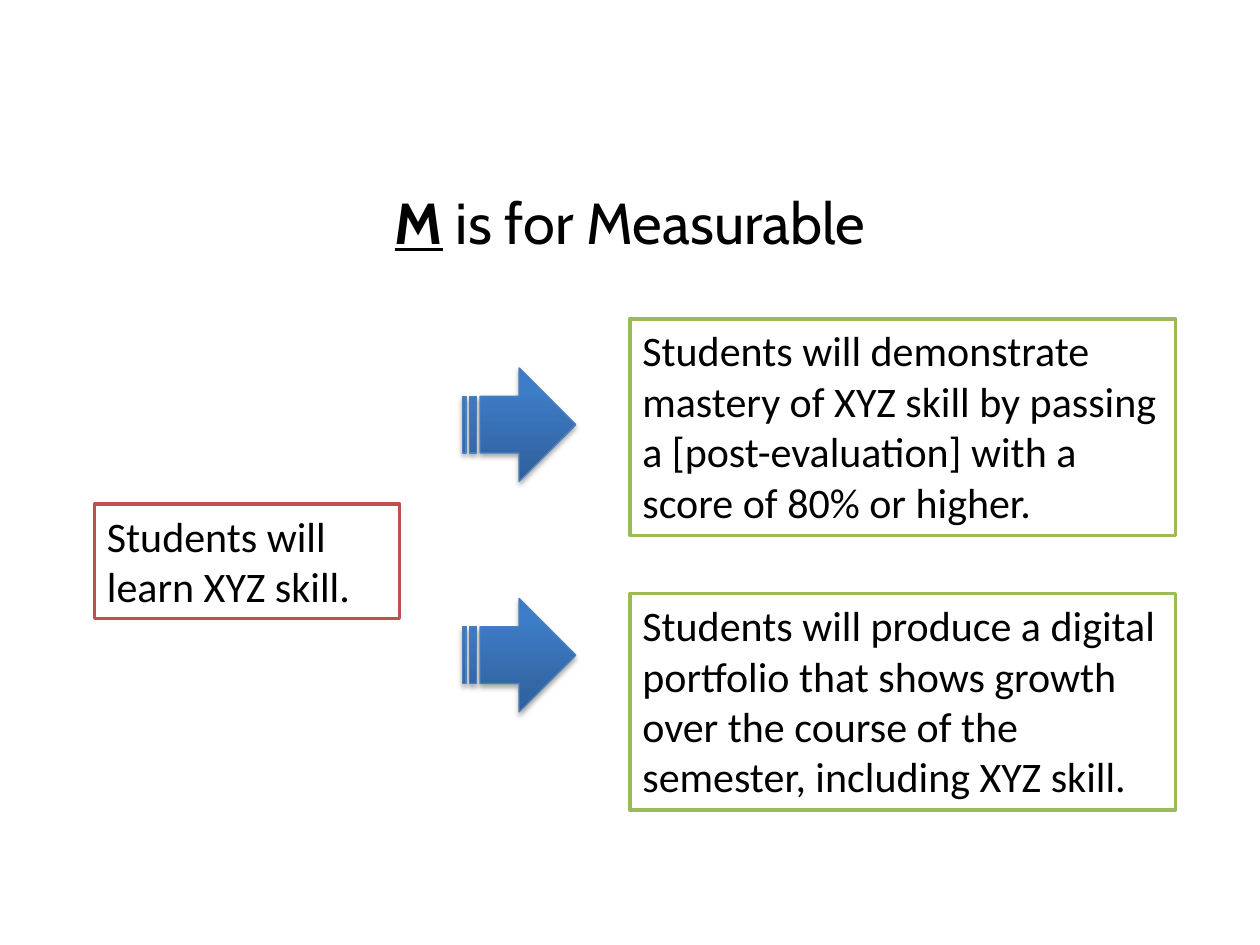
from lxml import etree
from pptx import Presentation
from pptx.dml.color import RGBColor
from pptx.enum.shapes import MSO_SHAPE
from pptx.enum.text import MSO_ANCHOR, MSO_AUTO_SIZE, PP_ALIGN
from pptx.oxml.ns import qn
from pptx.util import Inches, Pt

RECT = MSO_SHAPE.RECTANGLE
ARROW = MSO_SHAPE.STRIPED_RIGHT_ARROW
MIDDLE = MSO_ANCHOR.MIDDLE
CENTER, LEFT = PP_ALIGN.CENTER, PP_ALIGN.LEFT
GROW = MSO_AUTO_SIZE.SHAPE_TO_FIT_TEXT
NO_FIT = MSO_AUTO_SIZE.NONE

COLORS = {
    "text": "000000", "paper": "FFFFFF",
    "vague": "C0504D", "clear": "9BBB59", "edge": "4B7EBC",
    "dark": "2F5F99", "mid": "3D7CC7", "light": "3A7CCB",
}
STOPS = [(0, "dark"), (80, "mid"), (100, "light")]

# Each measurable goal: arrow top, box top, wording
GOALS = [
    (2.92, 2.53, "Students will demonstrate mastery of XYZ skill by passing "
                 "a [post-evaluation] with a score of 80% or higher."),
    (4.75, 4.71, "Students will produce a digital portfolio that shows growth "
                 "over the course of the semester, including XYZ skill."),
]


def color(name):
    return RGBColor.from_string(COLORS[name])


def set_font(font, face, size):
    font.name = face
    font.size = Pt(size)
    font.color.rgb = color("text")


def add_shape(slide, kind, box, edge, width):
    shape = slide.shapes.add_shape(kind, *map(Inches, box))
    shape.shadow.inherit = False
    shape.line.color.rgb = color(edge)
    shape.line.width = Pt(width)
    return shape


def add_title(slide):
    title = slide.shapes.title
    title.left, title.top = Inches(0.5), Inches(1.17)
    title.width, title.height = Inches(9), Inches(1.17)
    frame = title.text_frame
    frame.vertical_anchor = MIDDLE
    frame.auto_size = NO_FIT
    para = frame.paragraphs[0]
    para.alignment = CENTER
    for text, strong in [("M", True), (" is for Measurable", False)]:
        run = para.add_run()
        run.text = text
        set_font(run.font, "Cabin", 33)
        run.font.bold = run.font.underline = strong


def add_box(slide, box, edge, text):
    shape = add_shape(slide, RECT, box, edge, 2)
    shape.fill.solid()
    shape.fill.fore_color.rgb = color("paper")
    frame = shape.text_frame
    frame.word_wrap = True
    frame.auto_size = GROW
    frame.vertical_anchor = MSO_ANCHOR.TOP
    para = frame.paragraphs[0]
    para.text = text
    para.alignment = LEFT
    set_font(para.font, "Calibri", 24)


def add_color(parent, name):
    return etree.SubElement(parent, qn("a:srgbClr"), val=COLORS[name])


def add_arrow(slide, top):
    shape = add_shape(slide, ARROW, (3.67, top, 0.9, 0.9), "edge", 0.75)

    # Gradient running from the bottom up
    shape.fill.gradient()
    shape.fill.gradient_angle = 90
    props = shape.element.spPr
    stops = props.find(".//" + qn("a:gsLst"))
    for stop in list(stops):
        stops.remove(stop)
    for pos, name in STOPS:
        stop = etree.SubElement(stops, qn("a:gs"), pos=str(pos * 1000))
        add_color(stop, name)

    # Soft shadow straight below
    shadow = etree.SubElement(
        props.find(qn("a:effectLst")), qn("a:outerShdw"),
        blurRad=str(Pt(3.1)), dist=str(Pt(1.8)), dir="5400000",
        rotWithShape="0")
    etree.SubElement(add_color(shadow, "text"), qn("a:alpha"), val="35000")


def main():
    deck = Presentation()
    deck.slide_width, deck.slide_height = Inches(10), Inches(7.5)
    slide = deck.slides.add_slide(deck.slide_layouts[5])

    add_title(slide)
    add_box(slide, (0.75, 4, 2.42, 0.91), "vague",
            "Students will learn XYZ skill.")
    for arrow_top, box_top, text in GOALS:
        add_arrow(slide, arrow_top)
        add_box(slide, (5, box_top, 4.33, 1.72), "clear", text)

    deck.save("out.pptx")


if __name__ == "__main__":
    main()
